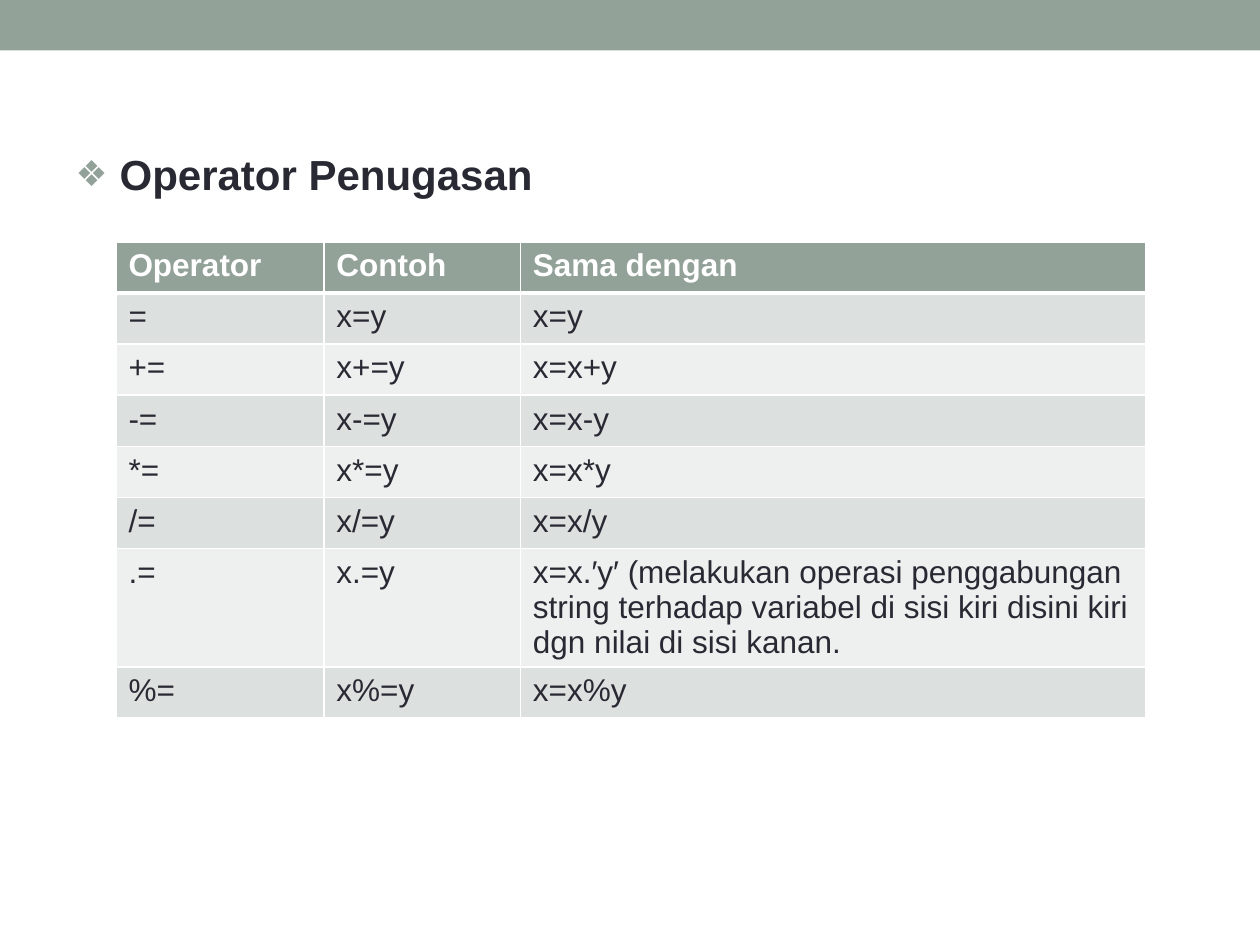
import pptx
import pptx.dml.color
import pptx.enum.shapes
import pptx.enum.text
import pptx.oxml.ns
import pptx.util
from lxml import etree

SAGE = pptx.dml.color.RGBColor(0x93, 0xA2, 0x99)
INK = pptx.dml.color.RGBColor(0x29, 0x29, 0x34)
WHITE = pptx.dml.color.RGBColor(0xFF, 0xFF, 0xFF)
ROW_BANDS = (
    pptx.dml.color.RGBColor(0xDC, 0xE0, 0xDE),
    pptx.dml.color.RGBColor(0xEE, 0xF0, 0xEF),
)
FONT = "Arial"
COLUMN_WIDTHS = (1.65, 1.56, 4.96)
ROW_HEIGHT = pptx.util.Pt(29.2)
HEADINGS = ("Operator", "Contoh", "Sama dengan")
OPERATORS = (
    ("=", "x=y", "x=y"),
    ("+=", "x+=y", "x=x+y"),
    ("‐=", "x‐=y", "x=x‐y"),
    ("*=", "x*=y", "x=x*y"),
    ("/=", "x/=y", "x=x/y"),
    (".=", "x.=y", "x=x.′y′ (melakukan operasi penggabungan string terhadap "
     "variabel di sisi kiri disini kiri dgn nilai di sisi kanan."),
    ("%=", "x%=y", "x=x%y"),
)


def add_child(parent, tag, **attributes):
    child = etree.SubElement(parent, pptx.oxml.ns.qn(tag))
    for key, value in attributes.items():
        child.set(key, str(value))
    return child


def add_run(paragraph, text, size, color, bold=False):
    run = paragraph.add_run()
    run.text = text
    run.font.name = FONT
    run.font.size = pptx.util.Pt(size)
    run.font.bold = bold
    run.font.color.rgb = color


def add_top_band(slide, width, height):
    band = slide.shapes.add_shape(
        pptx.enum.shapes.MSO_SHAPE.RECTANGLE, 0, 0, width, height)
    band.shadow.inherit = False
    band.fill.solid()
    band.fill.fore_color.rgb = SAGE
    band.line.fill.background()


def set_bullet(paragraph, symbol, indent):
    properties = paragraph._p.get_or_add_pPr()
    properties.set("marL", str(indent))
    properties.set("indent", str(-indent))
    color = add_child(properties, "a:buClr")
    add_child(color, "a:srgbClr", val=SAGE)
    add_child(properties, "a:buSzPct", val=85000)
    add_child(properties, "a:buFont", typeface=FONT)
    add_child(properties, "a:buChar", char=symbol)


def format_title(slide, text):
    title = slide.shapes.title
    title.left, title.top = pptx.util.Inches(0.5), pptx.util.Inches(1.08)
    title.width, title.height = pptx.util.Inches(9), pptx.util.Inches(0.67)
    frame = title.text_frame
    frame.auto_size = pptx.enum.text.MSO_AUTO_SIZE.NONE
    frame.vertical_anchor = pptx.enum.text.MSO_ANCHOR.TOP
    frame.margin_top = pptx.util.Inches(0.1)
    paragraph = frame.paragraphs[0]
    paragraph.alignment = pptx.enum.text.PP_ALIGN.LEFT
    set_bullet(paragraph, "❖", pptx.util.Inches(0.35))
    add_run(paragraph, text, 24, INK, bold=True)


def set_borders(cell, top, bottom):
    properties = cell._tc.get_or_add_tcPr()
    widths = {"a:lnL": 1, "a:lnR": 1, "a:lnT": top, "a:lnB": bottom}
    for tag, points in widths.items():
        line = add_child(properties, tag, w=pptx.util.Pt(points))
        add_child(add_child(line, "a:solidFill"), "a:srgbClr", val=WHITE)


def fill_row(row, texts, index):
    is_header = index == 0
    background = SAGE if is_header else ROW_BANDS[(index - 1) % 2]
    row.height = ROW_HEIGHT
    for cell, text in zip(row.cells, texts):
        set_borders(cell, 3 if index == 1 else 1, 3 if is_header else 1)
        cell.fill.solid()
        cell.fill.fore_color.rgb = background
        add_run(cell.text_frame.paragraphs[0], text, 18,
                WHITE if is_header else INK, bold=is_header)


def add_operator_table(slide):
    rows = (HEADINGS, *OPERATORS)
    table = slide.shapes.add_table(
        len(rows), len(HEADINGS),
        pptx.util.Inches(0.92), pptx.util.Inches(1.92),
        pptx.util.Inches(sum(COLUMN_WIDTHS)), ROW_HEIGHT * len(rows)).table
    for column, width in zip(table.columns, COLUMN_WIDTHS):
        column.width = pptx.util.Inches(width)
    for index, texts in enumerate(rows):
        fill_row(table.rows[index], texts, index)


def main():
    presentation = pptx.Presentation()
    presentation.slide_width = pptx.util.Inches(10)
    presentation.slide_height = pptx.util.Inches(7.5)
    slide = presentation.slides.add_slide(presentation.slide_layouts[5])
    add_top_band(slide, presentation.slide_width, pptx.util.Inches(0.4))
    format_title(slide, "Operator Penugasan")
    add_operator_table(slide)
    presentation.save("out.pptx")


if __name__ == "__main__":
    main()
